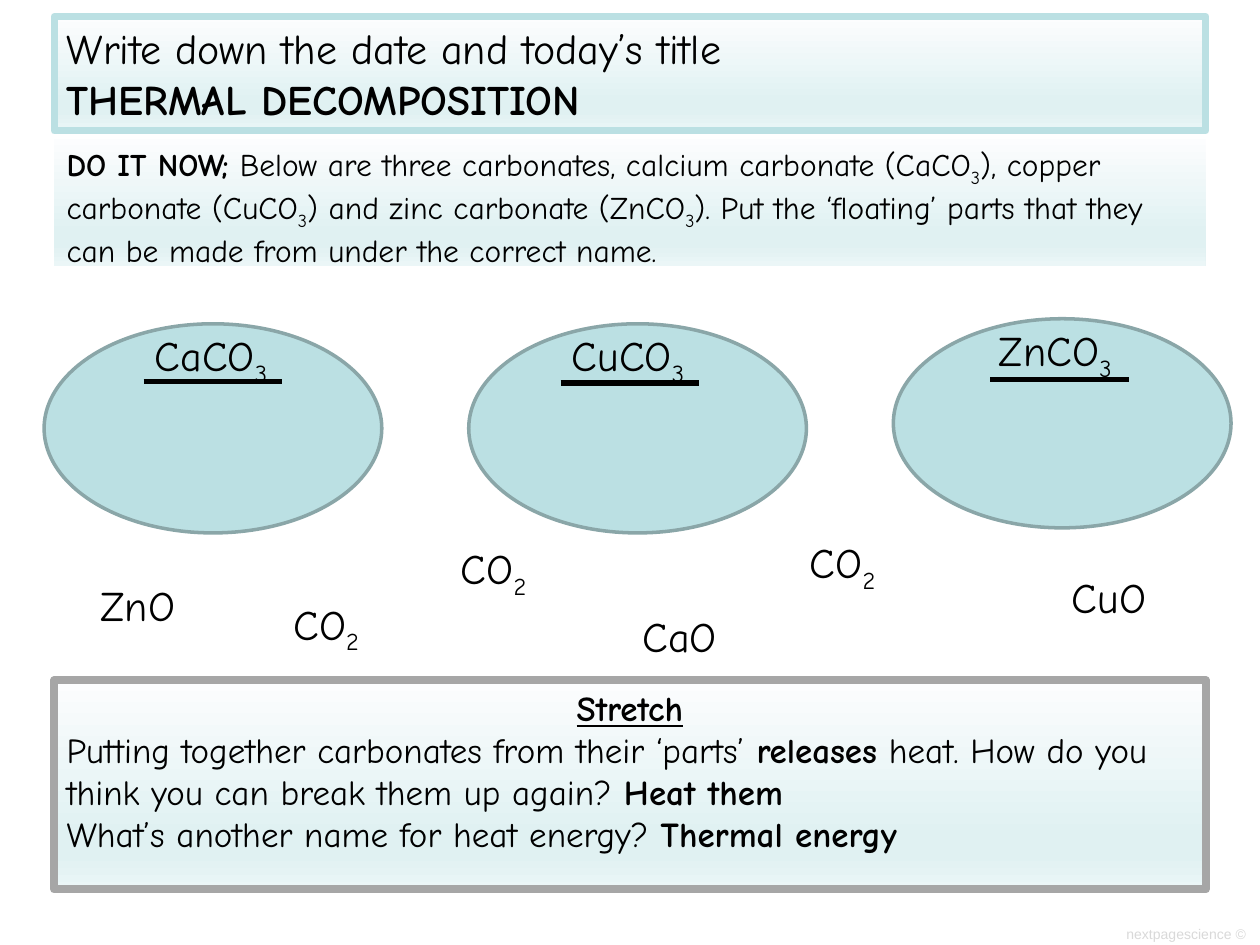
from copy import deepcopy
from dataclasses import dataclass

from lxml.etree import SubElement
from pptx import Presentation
from pptx.dml.color import RGBColor
from pptx.enum.shapes import MSO_CONNECTOR, MSO_SHAPE
from pptx.enum.text import MSO_ANCHOR, MSO_AUTO_SIZE, PP_ALIGN
from pptx.oxml.ns import qn
from pptx.util import Inches, Pt


@dataclass(frozen=True)
class Theme:
    font: str = "Comic Neue"
    credit_font: str = "Arial"
    text: RGBColor = RGBColor(0, 0, 0)
    teal: RGBColor = RGBColor(0xBB, 0xE0, 0xE3)
    teal_dark: RGBColor = RGBColor(0x8A, 0xA6, 0xA8)
    grey: RGBColor = RGBColor(0xA6, 0xA6, 0xA6)
    pale_grey: RGBColor = RGBColor(0xD9, 0xD9, 0xD9)
    gradient: tuple = ((0, "FCFDFE"), (0.74, "E0F1F2"), (0.83, "E0F1F2"), (1, "EBF6F7"))
    large: int = 24
    medium: int = 20
    body: int = 18
    credit: int = 8


theme = Theme()


def write(shape, paragraphs, size):
    """Fill a shape with paragraphs of (text, style) runs; b, u and s mean bold, underline, subscript."""
    text_frame = shape.text_frame
    text_frame.word_wrap = True
    text_frame.auto_size = MSO_AUTO_SIZE.NONE
    text_frame.vertical_anchor = MSO_ANCHOR.TOP
    for index, runs in enumerate(paragraphs):
        paragraph = text_frame.add_paragraph() if index else text_frame.paragraphs[0]
        paragraph.alignment = PP_ALIGN.LEFT
        for text, style in runs:
            run = paragraph.add_run()
            run.text = text
            run.font.name = theme.font
            run.font.size = Pt(size)
            run.font.color.rgb = theme.text
            run.font.bold = "b" in style
            run.font.underline = "u" in style
            if "s" in style:
                run.font._element.set("baseline", "-25000")


def style_panel(shape, line_color=None, line_width=0):
    """Give a panel the pale vertical gradient and an optional border."""
    shape.fill.gradient()
    shape.fill.gradient_angle = 270
    stop_list = shape._element.spPr.find(qn("a:gradFill")).find(qn("a:gsLst"))
    while len(stop_list) < len(theme.gradient):
        stop_list.append(deepcopy(stop_list[0]))
    for stop, (position, color) in zip(shape.fill.gradient_stops, theme.gradient):
        stop.position = position
        stop.color.rgb = RGBColor.from_string(color)
    if line_color is None:
        shape.line.fill.background()
    else:
        shape.line.color.rgb = line_color
        shape.line.width = Pt(line_width)


presentation = Presentation()
presentation.slide_width = Inches(10)
presentation.slide_height = Inches(7.5)
slide = presentation.slides.add_slide(presentation.slide_layouts[5])
shapes = slide.shapes
panel_left, panel_width = Inches(0.43), Inches(9.14)

# Starter task
task = shapes.add_shape(MSO_SHAPE.RECTANGLE, panel_left, Inches(1.1), panel_width, Inches(1.01))
task.shadow.inherit = False
style_panel(task)
write(task, [[
    ("DO IT NOW; ", "b"),
    ("Below are three carbonates, calcium carbonate (CaCO", ""), ("3", "s"),
    ("), copper carbonate (CuCO", ""), ("3", "s"),
    (") and zinc carbonate (ZnCO", ""), ("3", "s"),
    ("). Put the ‘floating’ parts that they can be made from under the correct name.", ""),
]], theme.body)

# Title
title = shapes.title
title.left, title.top, title.width, title.height = panel_left, Inches(0.13), panel_width, Inches(0.91)
style_panel(title, theme.teal, 4)
write(title, [[("Write down the date and today’s title", "")],
              [("THERMAL DECOMPOSITION", "b")]], theme.large)

# Carbonate ovals, each with an underlined formula: oval top, label left, rule left, rule top
carbonates = [
    ("CaCO", 2.57, 1.13, 1.14, 3.03),
    ("CuCO", 2.57, 4.44, 4.45, 3.04),
    ("ZnCO", 2.53, 7.83, 7.86, 3.01),
]
for column, (formula, top, label_left, rule_left, rule_top) in enumerate(carbonates):
    oval = shapes.add_shape(MSO_SHAPE.OVAL, Inches(0.35 + 3.37 * column), Inches(top),
                            Inches(2.68), Inches(1.66))
    oval.shadow.inherit = False
    oval.fill.solid()
    oval.fill.fore_color.rgb = theme.teal
    oval.line.color.rgb = theme.teal_dark
    oval.line.width = Pt(2)

    label = shapes.add_textbox(Inches(label_left), Inches(top), Inches(1.5), Inches(0.5))
    write(label, [[(formula, ""), ("3", "s")]], theme.large)

    rule = shapes.add_connector(MSO_CONNECTOR.STRAIGHT, Inches(rule_left), Inches(rule_top),
                                Inches(rule_left + 1.1), Inches(rule_top))
    rule.line.color.rgb = theme.text
    rule.line.width = Pt(3)
    SubElement(rule._element.spPr, qn("a:effectLst"))

# Floating parts
carbon_dioxide = [("CO", ""), ("2", "s")]
parts = [
    ([("ZnO", "")], 0.7, 4.55),
    (carbon_dioxide, 2.23, 4.7),
    (carbon_dioxide, 3.56, 4.26),
    ([("CaO", "")], 5, 4.8),
    (carbon_dioxide, 6.33, 4.21),
    ([("CuO", "")], 8.41, 4.49),
]
for runs, left, top in parts:
    part = shapes.add_textbox(Inches(left), Inches(top), Inches(1.5), Inches(0.5))
    write(part, [runs], theme.large)

# Stretch questions with answers
stretch = shapes.add_shape(MSO_SHAPE.RECTANGLE, panel_left, Inches(5.4), panel_width, Inches(1.66))
stretch.shadow.inherit = False
style_panel(stretch, theme.grey, 4.5)
write(stretch, [
    [("Stretch", "bu")],
    [("Putting together carbonates from their ‘parts’ ", ""), ("releases", "b"),
     (" heat. How do you think you can break them up again? ", ""), ("Heat them", "b")],
    [("What’s another name for heat energy? ", ""), ("Thermal energy", "b")],
], theme.medium)
stretch.text_frame.paragraphs[0].alignment = PP_ALIGN.CENTER

# Copyright line
credit = shapes.add_textbox(Inches(8.83), Inches(7.3), Inches(1.17), Inches(0.2))
write(credit, [[("nextpagescience ©", "")]], theme.credit)
credit.text_frame.margin_left = credit.text_frame.margin_right = 0
credit_paragraph = credit.text_frame.paragraphs[0]
credit_paragraph.alignment = PP_ALIGN.CENTER
credit_paragraph.runs[0].font.name = theme.credit_font
credit_paragraph.runs[0].font.color.rgb = theme.pale_grey

presentation.save("out.pptx")
